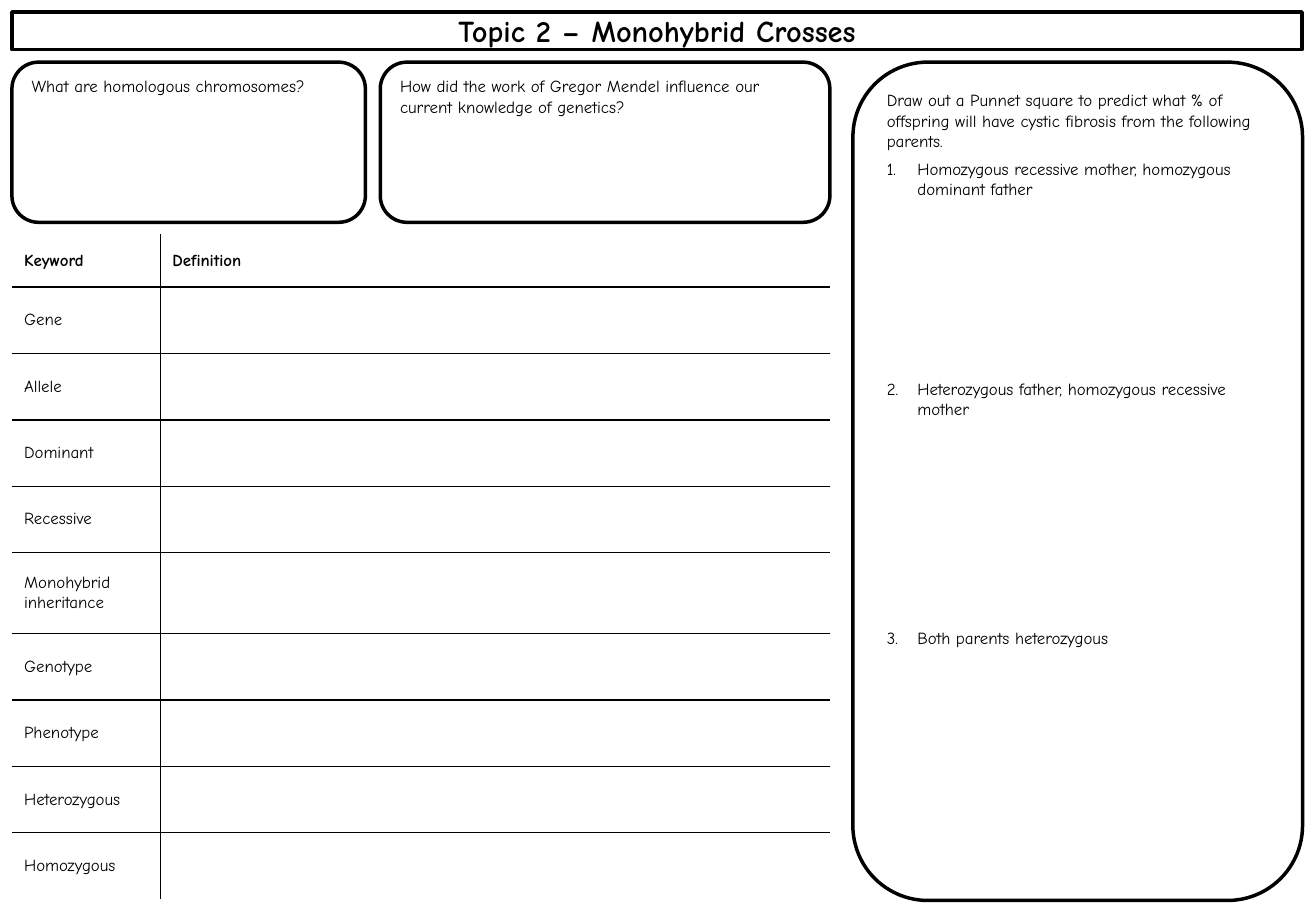
"""Build a one-page worksheet on monohybrid crosses."""
from dataclasses import dataclass

from lxml import etree
from pptx import Presentation
from pptx import util as u
from pptx.dml import color
from pptx.enum import shapes, text
from pptx.oxml import ns

FONT = "Comic Neue"
INK = "000000"
PAPER = "FFFFFF"
EDGE = 2.08


@dataclass
class Para:
    words: str
    gap: float = 0
    count: int = 0


@dataclass
class Box:
    left: float
    top: float
    width: float
    height: float
    paras: list[Para]


TITLE = Box(0.25, 0.25, 26.97, 0.79, [Para("Topic 2 – Monohybrid Crosses")])
BOXES = [
    Box(0.25, 1.3, 7.39, 3.35, [Para("What are homologous chromosomes?")]),
    Box(7.95, 1.3, 9.4, 3.35, [
        Para("How did the work of Gregor Mendel influence our current knowledge of genetics?")]),
    Box(17.83, 1.3, 9.4, 17.53, [
        Para("Draw out a Punnet square to predict what % of offspring will have "
             "cystic fibrosis from the following parents."),
        Para("Homozygous recessive mother, homozygous dominant father", 4.5, 1),
        Para("Heterozygous father, homozygous recessive mother", 106.5, 2),
        Para("Both parents heterozygous", 123.5, 3)]),
]
TERMS = ["Gene", "Allele", "Dominant", "Recessive", "Monohybrid inheritance",
         "Genotype", "Phenotype", "Heterozygous", "Homozygous"]
COLS = [3.1, 14]
HEAD, ROW, TALL = 1.1, 1.39, 1.69


def tint(code: str) -> color.RGBColor:
    return color.RGBColor.from_string(code)


def paint(fill, code: str) -> None:
    fill.solid()
    fill.fore_color.rgb = tint(code)


def frame(shape) -> None:
    paint(shape.fill, PAPER)
    shape.line.color.rgb = tint(INK)
    shape.line.width = u.Pt(EDGE)


def write(para, words: str, size: float = 10, bold: bool = False) -> None:
    run = para.add_run()
    run.text = words
    run.font.name = FONT
    run.font.size = u.Pt(size)
    run.font.bold = bold
    run.font.color.rgb = tint(INK)


def number(para, count: int) -> None:
    props = para._p.get_or_add_pPr()
    props.set("marL", str(u.Cm(0.64)))
    props.set("indent", str(-u.Cm(0.64)))
    etree.SubElement(props, ns.qn("a:buFont"), typeface=FONT)
    etree.SubElement(props, ns.qn("a:buAutoNum"), type="arabicPeriod", startAt=str(count))


def draw_title(slide, box: Box) -> None:
    title = slide.shapes.title
    title.left, title.top = u.Cm(box.left), u.Cm(box.top)
    title.width, title.height = u.Cm(box.width), u.Cm(box.height)
    frame(title)
    body = title.text_frame
    body.auto_size = text.MSO_AUTO_SIZE.NONE
    body.vertical_anchor = text.MSO_ANCHOR.MIDDLE
    body.paragraphs[0].alignment = text.PP_ALIGN.CENTER
    write(body.paragraphs[0], box.paras[0].words, 18, True)


def draw_box(slide, box: Box) -> None:
    shape = slide.shapes.add_shape(
        shapes.MSO_SHAPE.ROUNDED_RECTANGLE, u.Cm(box.left), u.Cm(box.top),
        u.Cm(box.width), u.Cm(box.height))
    shape.shadow.inherit = False
    frame(shape)
    body = shape.text_frame
    body.word_wrap = True
    body.vertical_anchor = text.MSO_ANCHOR.TOP
    for i, item in enumerate(box.paras):
        para = body.add_paragraph() if i else body.paragraphs[0]
        para.alignment = text.PP_ALIGN.LEFT
        para.space_before = u.Pt(item.gap)
        if item.count:
            number(para, item.count)
        write(para, item.words)


def rule(cell, drawn: dict[str, bool]) -> None:
    props = cell._tc.get_or_add_tcPr()
    for side, shown in drawn.items():
        line = etree.SubElement(props, ns.qn(f"a:ln{side}"), w=str(u.Pt(1)))
        if shown:
            fill = etree.SubElement(line, ns.qn("a:solidFill"))
            etree.SubElement(fill, ns.qn("a:srgbClr"), val=INK)
        else:
            etree.SubElement(line, ns.qn("a:noFill"))


def draw_table(slide) -> None:
    rows = [("Keyword", "Definition")] + [(term, "") for term in TERMS]
    highs = [HEAD] + [TALL if " " in term else ROW for term in TERMS]
    table = slide.shapes.add_table(
        len(rows), len(COLS), u.Cm(0.25), u.Cm(4.9),
        u.Cm(sum(COLS)), u.Cm(sum(highs))).table
    table.first_row = table.horz_banding = False
    for col, width in zip(table.columns, COLS):
        col.width = u.Cm(width)
    for r, (words, high) in enumerate(zip(rows, highs)):
        table.rows[r].height = u.Cm(high)
        for c, word in enumerate(words):
            cell = table.cell(r, c)
            rule(cell, {"L": c > 0, "R": c < len(COLS) - 1,
                        "T": r > 0, "B": r < len(rows) - 1})
            paint(cell.fill, PAPER)
            cell.vertical_anchor = text.MSO_ANCHOR.MIDDLE
            if word:
                write(cell.text_frame.paragraphs[0], word, bold=r == 0)


def main() -> None:
    deck = Presentation()
    deck.slide_width, deck.slide_height = u.Cm(27.51), u.Cm(19.3)
    slide = deck.slides.add_slide(deck.slide_layouts.get_by_name("Title Only"))
    draw_title(slide, TITLE)
    draw_table(slide)
    for box in BOXES:
        draw_box(slide, box)
    deck.save("out.pptx")


if __name__ == "__main__":
    main()
